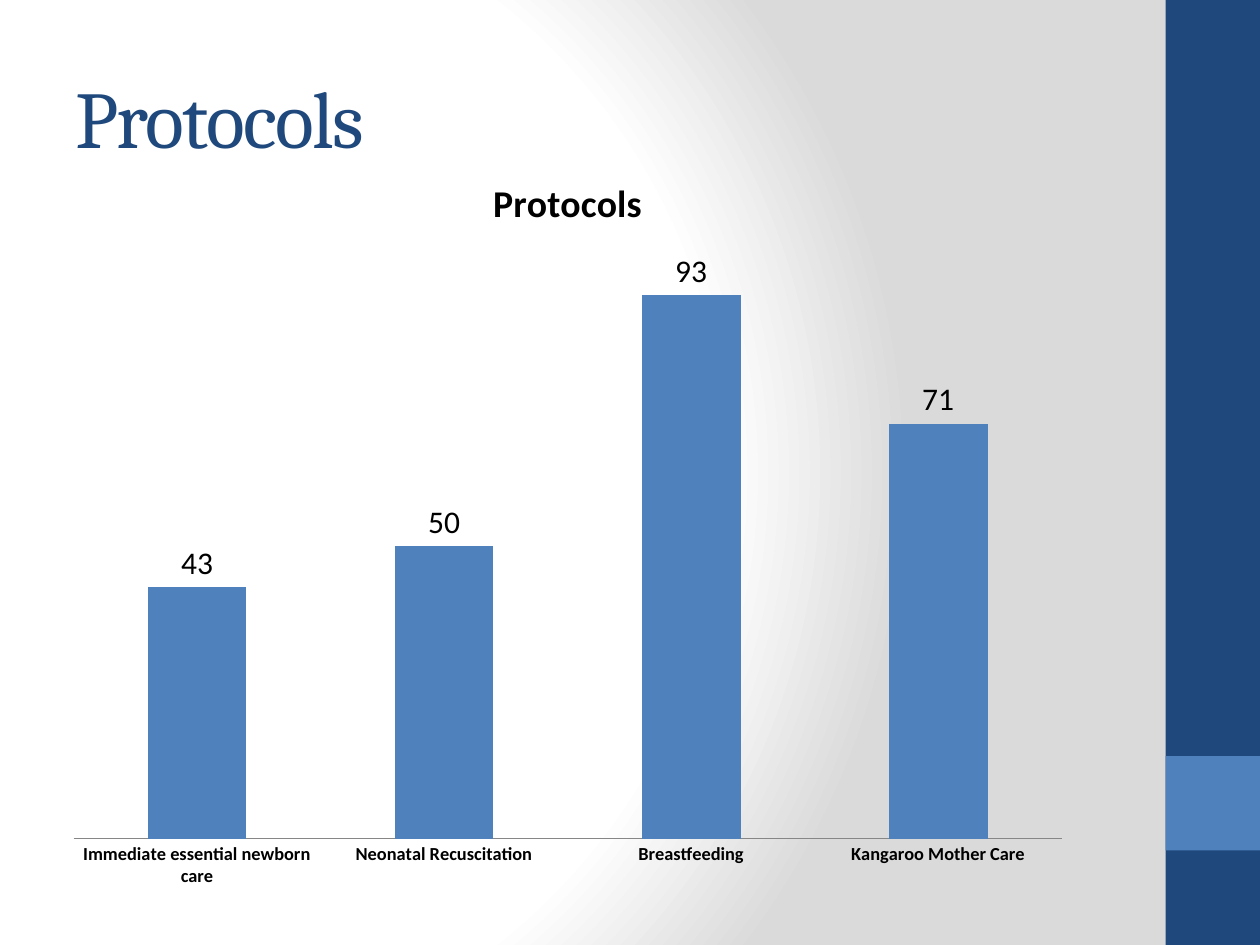
from lxml import etree
from pptx import Presentation
from pptx.chart.data import CategoryChartData
from pptx.dml.color import RGBColor
from pptx.enum.chart import XL_CHART_TYPE, XL_LABEL_POSITION, XL_TICK_MARK
from pptx.enum.shapes import MSO_SHAPE
from pptx.enum.text import MSO_ANCHOR, PP_ALIGN
from pptx.oxml.ns import nsdecls, qn
from pptx.util import Pt

PX = 9144  # 100 px to the inch
NAVY = RGBColor(0x1F, 0x49, 0x7D)
BLUE = RGBColor(0x4F, 0x81, 0xBD)
BLACK = RGBColor(0, 0, 0)
WHITE = RGBColor(0xFF, 0xFF, 0xFF)
PALE = RGBColor(0xDA, 0xDA, 0xDA)
GRAY = RGBColor(0x86, 0x86, 0x86)
RECT = MSO_SHAPE.RECTANGLE
COLUMN = XL_CHART_TYPE.COLUMN_CLUSTERED
OUTSIDE = XL_LABEL_POSITION.OUTSIDE_END
NO_TICK = XL_TICK_MARK.NONE
LEFT = PP_ALIGN.LEFT
MIDDLE = MSO_ANCHOR.MIDDLE


def emu(*box):
    return [n * PX for n in box]


class Deck:
    """Holds the style and the current slide."""

    head = "Cambria"
    body = "Calibri"

    def __init__(self, wide, high):
        self.prs = Presentation()
        self.prs.slide_width, self.prs.slide_height = emu(wide, high)
        self.slide = self.prs.slides.add_slide(self.prs.slide_layouts[5])

    def glow(self, stops, rect):
        """Fill the background with a circular gradient."""
        self.slide.background.fill.solid()
        frame = self.slide.element.find(".//" + qn("p:bgPr"))
        marks = "".join(
            f'<a:gs pos="{pos * 1000}"><a:srgbClr val="{tone}"/></a:gs>'
            for pos, tone in stops)
        sides = " ".join(f'{k}="{v * 1000}"' for k, v in zip("ltrb", rect))
        frame.replace(frame[0], etree.fromstring(
            f'<a:gradFill {nsdecls("a")} rotWithShape="1">'
            f'<a:gsLst>{marks}</a:gsLst><a:path path="circle">'
            f'<a:fillToRect {sides}/></a:path></a:gradFill>'))

    def block(self, box, tone):
        shape = self.slide.shapes.add_shape(RECT, *emu(*box))
        shape.shadow.inherit = False
        shape.fill.solid()
        shape.fill.fore_color.rgb = tone
        shape.line.fill.background()

    def title(self, text, box):
        shape = self.slide.shapes.title
        shape.left, shape.top, shape.width, shape.height = emu(*box)
        frame = shape.text_frame
        frame.text = text
        frame.vertical_anchor = MIDDLE
        para = frame.paragraphs[0]
        para.alignment = LEFT
        run = para.runs[0]
        self.style(run.font, 46, NAVY, self.head)
        run.font._element.set("spc", "-100")

    def style(self, font, size, tone=BLACK, face=body, bold=False):
        font.size = Pt(size)
        font.name = face
        font.bold = bold
        font.color.rgb = tone

    def chart(self, box, title, name, rows):
        data = CategoryChartData(number_format="0")
        data.categories = list(rows)
        data.add_series(name, list(rows.values()))
        chart = self.slide.shapes.add_chart(COLUMN, *emu(*box), data).chart
        self.style(chart.font, 18)
        chart.has_legend = False
        chart.has_title = True
        frame = chart.chart_title.text_frame
        frame.text = title
        self.style(frame.paragraphs[0].runs[0].font, 21.6, bold=True)
        chart.chart_title.include_in_layout = False

        cats = chart.category_axis
        cats.major_tick_mark = cats.minor_tick_mark = NO_TICK
        cats.format.line.color.rgb = GRAY
        self.style(cats.tick_labels.font, 10.5, bold=True)
        vals = chart.value_axis
        vals.visible = False
        vals.has_major_gridlines = False
        vals.minimum_scale, vals.maximum_scale = 0, 100

        plot = chart.plots[0]
        plot.gap_width, plot.overlap = 150, -25
        plot.vary_by_categories = False
        fill = plot.series[0].format.fill
        fill.solid()
        fill.fore_color.rgb = BLUE
        plot.has_data_labels = True
        labels = plot.data_labels
        labels.show_value = True
        labels.position = OUTSIDE
        labels.number_format = "0"
        labels.number_format_is_linked = False
        self.style(labels.font, 18)


def main():
    deck = Deck(1000, 750)
    deck.glow([(0, WHITE), (75, WHITE), (100, PALE)], (20, 50, 100, 50))
    deck.block((925, 0, 75, 750), NAVY)
    deck.block((925, 600, 75, 75), BLUE)
    deck.title("Protocols", (50, 30, 833, 125))
    deck.chart((42, 117, 817, 600), "Protocols", "Series 1", {
        "Immediate essential newborn care": 43,
        "Neonatal Recuscitation": 50,
        "Breastfeeding": 93,
        "Kangaroo Mother Care": 71,
    })
    deck.prs.save("out.pptx")


if __name__ == "__main__":
    main()
